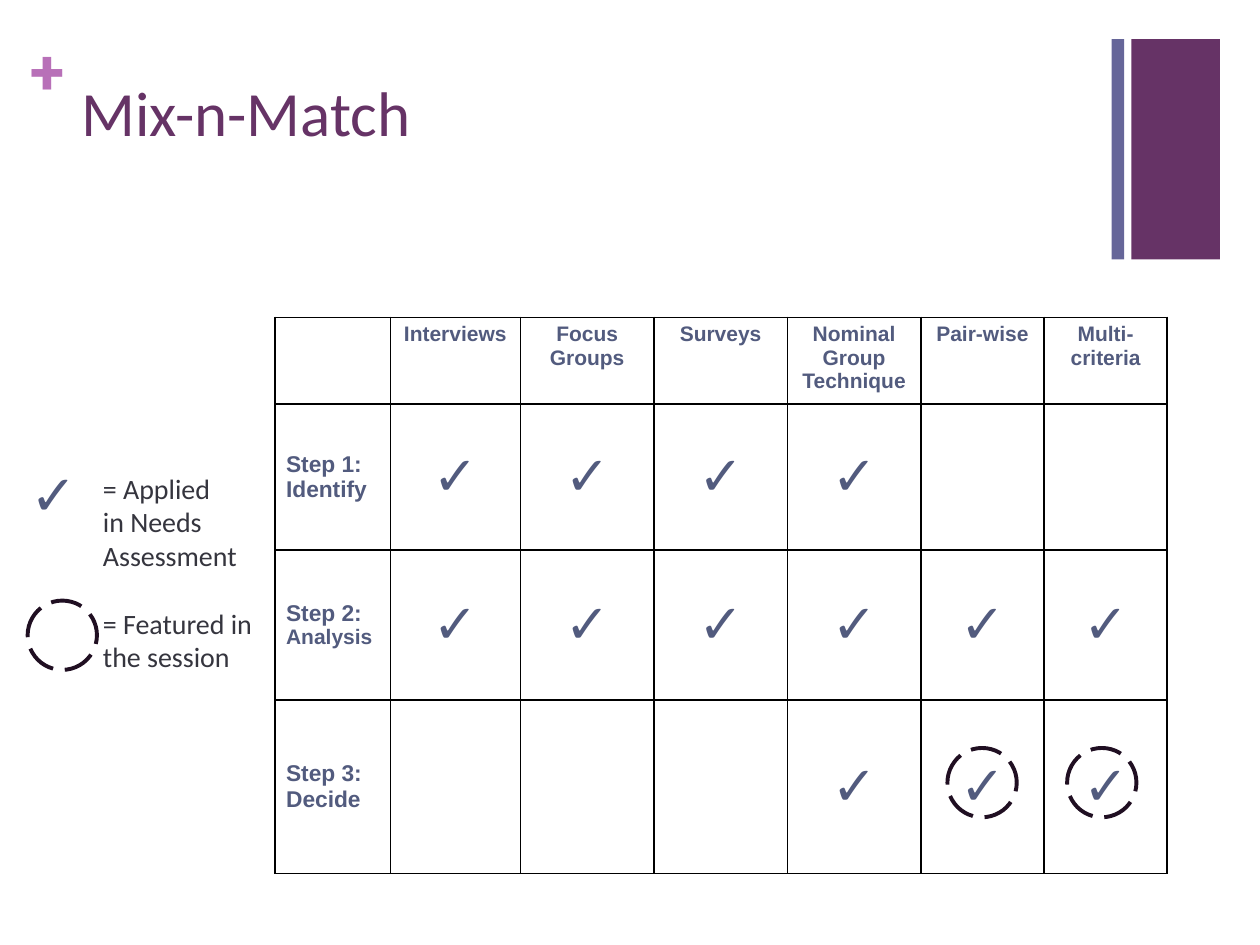
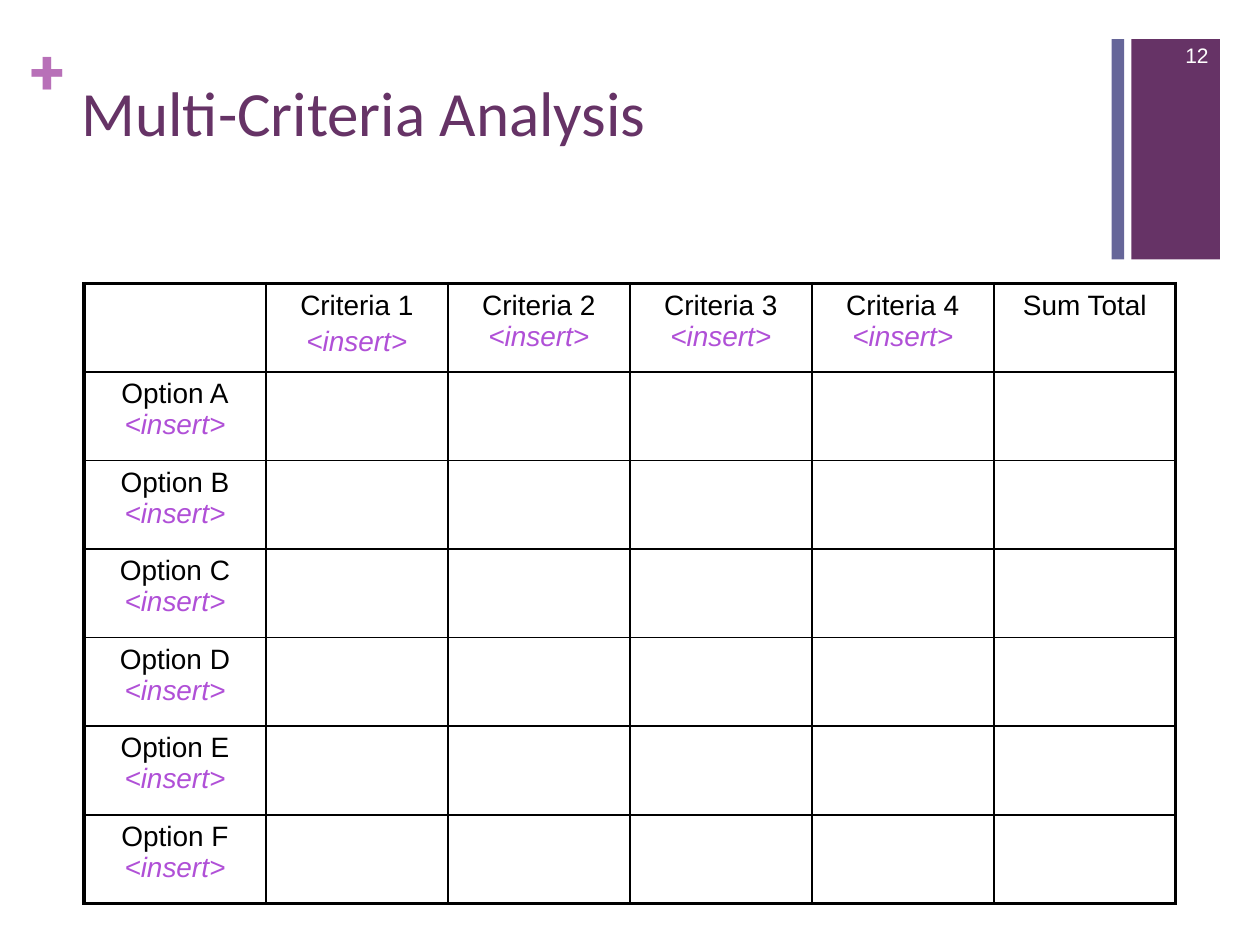
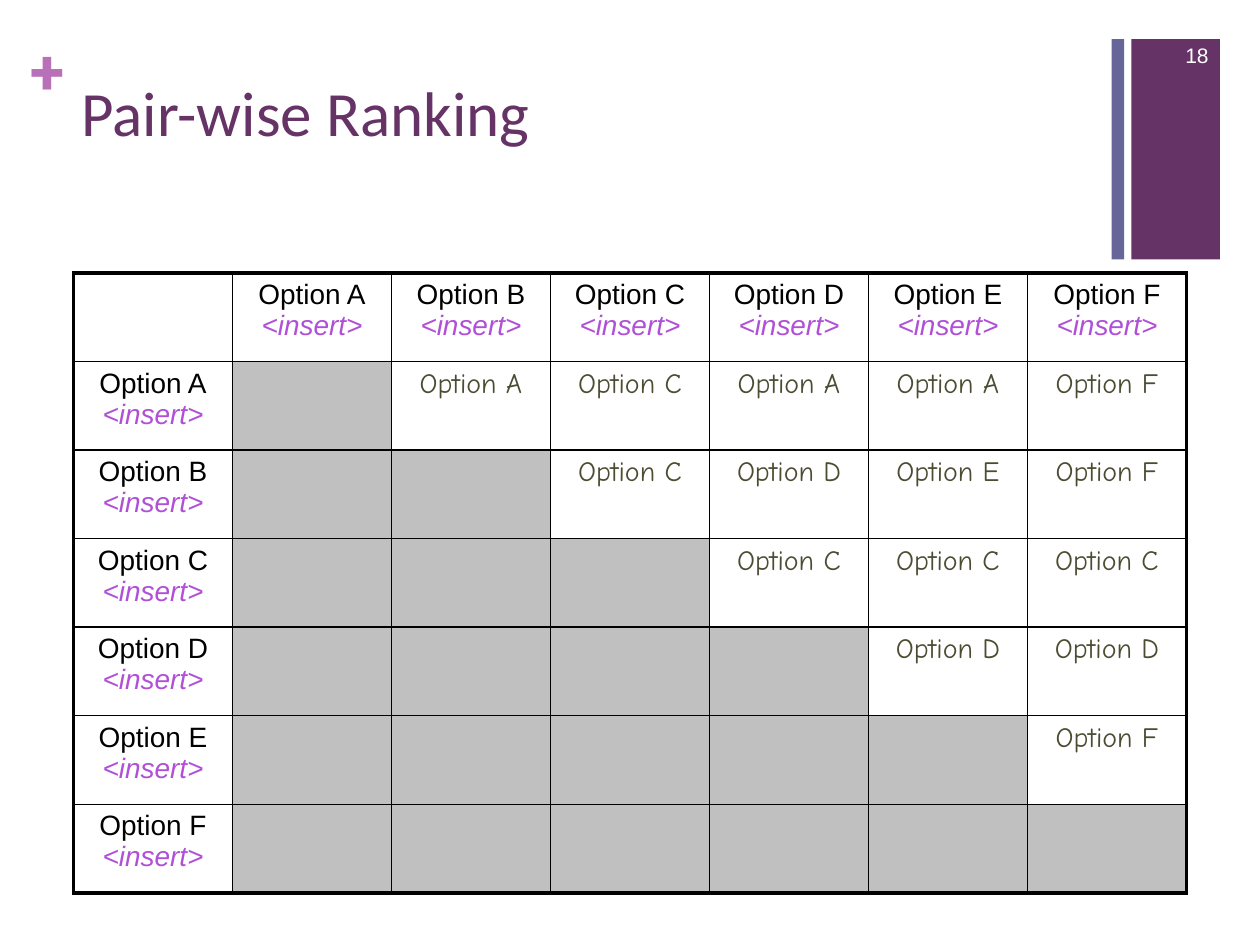
from dataclasses import dataclass

from lxml.etree import SubElement
from pptx import Presentation
from pptx.dml.color import RGBColor
from pptx.enum.dml import MSO_LINE_DASH_STYLE as Dash
from pptx.enum.shapes import MSO_SHAPE as Shape
from pptx.enum.text import MSO_ANCHOR as Anchor, PP_ALIGN as Align
from pptx.oxml.ns import qn
from pptx.util import Pt


@dataclass(frozen=True)
class Style:
    font: str
    size: float
    color: str
    bold: bool = False
    italic: bool = False


@dataclass(frozen=True)
class Theme:
    # Colours
    band: str = "663366"
    stripe: str = "666699"
    ring: str = "200F22"
    grid: str = "000000"
    blocked: str = "C0C0C0"
    # Type
    title: Style = Style("Calibri", 36, "663366")
    plus: Style = Style("Roboto Slab", 36, "B870B8", bold=True)
    number: Style = Style("Arial", 12, "FFFFFF")
    method: Style = Style("Arial", 12, "525B7E", bold=True)
    step: Style = Style("Arial", 13, "525B7E", bold=True)
    check: Style = Style("Arial", 31, "525B7E")
    legend_check: Style = Style("Calibri", 32, "525B7E")
    legend: Style = Style("Calibri", 16, "35353E")
    label: Style = Style("Arial", 16, "000000")
    insert: Style = Style("Arial", 16, "B050D7", italic=True)
    winner: Style = Style("Comic Neue", 16, "4C4C33")
    # Line widths
    thin: float = 1
    thick: float = 2.25


THEME = Theme()
CHECK = "✓"
INSERT = "<insert>"
OPTIONS = [f"Option {letter}" for letter in "ABCDEF"]
ROW_HEIGHT = 50.6
RING_SIZE = 39.6


# Text
def set_font(font, style):
    font.name = style.font
    font.size = Pt(style.size)
    font.bold = style.bold
    font.italic = style.italic
    font.color.rgb = RGBColor.from_string(style.color)


def write(paragraph, text, style, align=Align.LEFT):
    paragraph.text = text
    paragraph.alignment = align
    set_font(paragraph.font, style)


def add_text(slide, box, text, style, align=Align.LEFT, anchor=Anchor.TOP, inset=True):
    frame = slide.shapes.add_textbox(*map(Pt, box)).text_frame
    frame.word_wrap = True
    frame.vertical_anchor = anchor
    if not inset:
        frame.margin_left = frame.margin_right = 0
        frame.margin_top = frame.margin_bottom = 0
    write(frame.paragraphs[0], text, style, align)
    return frame


# Shapes
def add_bar(slide, box, color):
    bar = slide.shapes.add_shape(Shape.RECTANGLE, *map(Pt, box))
    bar.shadow.inherit = False
    bar.fill.solid()
    bar.fill.fore_color.rgb = RGBColor.from_string(color)
    bar.line.fill.background()


def add_ring(slide, left, top):
    ring = slide.shapes.add_shape(
        Shape.OVAL, Pt(left), Pt(top), Pt(RING_SIZE), Pt(RING_SIZE))
    ring.shadow.inherit = False
    ring.fill.background()
    ring.line.color.rgb = RGBColor.from_string(THEME.ring)
    ring.line.width = Pt(THEME.thick)
    ring.line.dash_style = Dash.LONG_DASH


# Tables
def set_borders(cell, widths):
    properties = cell._tc.get_or_add_tcPr()
    for side, width in widths.items():
        line = SubElement(properties, qn(f"a:ln{side}"), w=str(Pt(width)))
        fill = SubElement(line, qn("a:solidFill"))
        SubElement(fill, qn("a:srgbClr"), val=THEME.grid)


def add_grid(slide, left, top, widths, heights, outer):
    table = slide.shapes.add_table(
        len(heights), len(widths), Pt(left), Pt(top),
        Pt(sum(widths)), Pt(sum(heights))).table
    table.first_row = table.horz_banding = False
    for column, width in zip(table.columns, widths):
        column.width = Pt(width)
    for row, height in zip(table.rows, heights):
        row.height = Pt(height)
    last_row, last_column = len(heights) - 1, len(widths) - 1
    for r in range(len(heights)):
        for c in range(len(widths)):
            cell = table.cell(r, c)
            on_edge = {"L": c == 0, "R": c == last_column,
                       "T": r == 0, "B": r == last_row}
            set_borders(cell, {side: outer if edge else THEME.thin
                               for side, edge in on_edge.items()})
            cell.fill.background()
    return table


def write_cell(cell, text, style, align=Align.CENTER, anchor=Anchor.TOP):
    cell.vertical_anchor = anchor
    write(cell.text_frame.paragraphs[0], text, style, align)


def write_label(cell, label):
    """A label with the insert prompt on the line below."""
    write_cell(cell, label, THEME.label)
    paragraph = cell.text_frame.paragraphs[0]
    paragraph.add_line_break()
    prompt = paragraph.add_run()
    prompt.text = INSERT
    set_font(prompt.font, THEME.insert)


# Parts that all slides share
def add_frame(deck, title, number=None):
    slide = deck.slides.add_slide(deck.slide_layouts[6])
    add_bar(slide, (646.5, 22.3, 50.6, 126), THEME.band)
    add_text(slide, (17.3, 18, 21, 44), "+", THEME.plus, inset=False)
    add_bar(slide, (635.2, 22.3, 7.2, 126), THEME.stripe)
    add_text(slide, (39.6, 38.2, 594.7, 87.8), title, THEME.title)
    if number:
        frame = add_text(slide, (653.8, 18.7, 43.9, 28.8), number, THEME.number,
                         Align.RIGHT, Anchor.MIDDLE)
        frame.paragraphs[0].line_spacing = 0.8
    return slide


# Slides
def add_mix_n_match(deck):
    slide = add_frame(deck, "Mix-n-Match")
    methods = ["Interviews", "Focus Groups", "Surveys",
               "Nominal Group Technique", "Pair-wise", "Multi-criteria"]
    steps = [("Step 1: ", "Identify", range(1, 5)),
             ("Step 2: ", "Analysis", range(1, 7)),
             ("Step 3: ", "Decide", range(4, 7))]
    grid = add_grid(slide, 157, 181.4,
                    [66, 74.4, 76.3, 76.3, 76.3, 70.4, 70.4],
                    [49.6, 83.3, 85.7, 99.2], THEME.thin)
    for row in grid.rows:
        for cell in row.cells:
            cell.margin_left = cell.margin_right = Pt(6.5)
            cell.margin_top = cell.margin_bottom = Pt(3)
    for c, method in enumerate(methods, 1):
        write_cell(grid.cell(0, c), method, THEME.method)
    for r, (step, task, used) in enumerate(steps, 1):
        name = grid.cell(r, 0)
        if task == "Analysis":
            # The longest task is set smaller to fit its column
            write_cell(name, step, THEME.step, Align.LEFT, Anchor.MIDDLE)
            small = name.text_frame.paragraphs[0].add_run()
            small.text = task
            set_font(small.font, THEME.method)
        else:
            write_cell(name, step + task, THEME.step, Align.LEFT, Anchor.MIDDLE)
        for c in used:
            write_cell(grid.cell(r, c), CHECK, THEME.check, anchor=Anchor.MIDDLE)

    # Legend
    legend = add_text(slide, (51.8, 265.7, 110.9, 123.8), "= Applied", THEME.legend)
    write(legend.add_paragraph(), "in Needs Assessment", THEME.legend)
    featured = legend.add_paragraph()
    write(featured, "= Featured in the session", THEME.legend)
    featured.space_before = Pt(19.5)
    add_text(slide, (10.1, 259.2, 50.4, 45.4), CHECK, THEME.legend_check)

    # Rings: legend key, then the two featured methods
    for left, top in [(15.8, 343.2), (609.8, 427.4), (541.4, 427.4)]:
        add_ring(slide, left, top)


def add_multi_criteria(deck):
    slide = add_frame(deck, "Multi-Criteria Analysis", "12")
    grid = add_grid(slide, 48, 162, [104] * 6, [ROW_HEIGHT] * 7, THEME.thick)
    first = grid.cell(0, 1)
    write_cell(first, "Criteria 1", THEME.label)
    prompt = first.text_frame.add_paragraph()
    write(prompt, INSERT, THEME.insert, Align.CENTER)
    prompt.space_before = Pt(3)
    for c in range(2, 5):
        write_label(grid.cell(0, c), f"Criteria {c}")
    write_cell(grid.cell(0, 5), "Sum Total", THEME.label)
    for r, option in enumerate(OPTIONS, 1):
        write_label(grid.cell(r, 0), option)


def add_pair_wise(deck):
    slide = add_frame(deck, "Pair-wise Ranking", "18")
    grid = add_grid(slide, 42, 156, [90.86] * 7, [ROW_HEIGHT] * 7, THEME.thick)
    winners = ["ACAAF", "CDEF", "CCC", "DD", "F", ""]
    for r, (option, row_winners) in enumerate(zip(OPTIONS, winners), 1):
        write_label(grid.cell(0, r), option)
        write_label(grid.cell(r, 0), option)
        for c in range(1, r + 1):
            fill = grid.cell(r, c).fill
            fill.solid()
            fill.fore_color.rgb = RGBColor.from_string(THEME.blocked)
        for c, letter in enumerate(row_winners, r + 1):
            write_cell(grid.cell(r, c), f"Option {letter}", THEME.winner)


def main():
    deck = Presentation()
    deck.slide_width, deck.slide_height = Pt(720), Pt(540)
    add_mix_n_match(deck)
    add_multi_criteria(deck)
    add_pair_wise(deck)
    deck.save("out.pptx")


if __name__ == "__main__":
    main()
